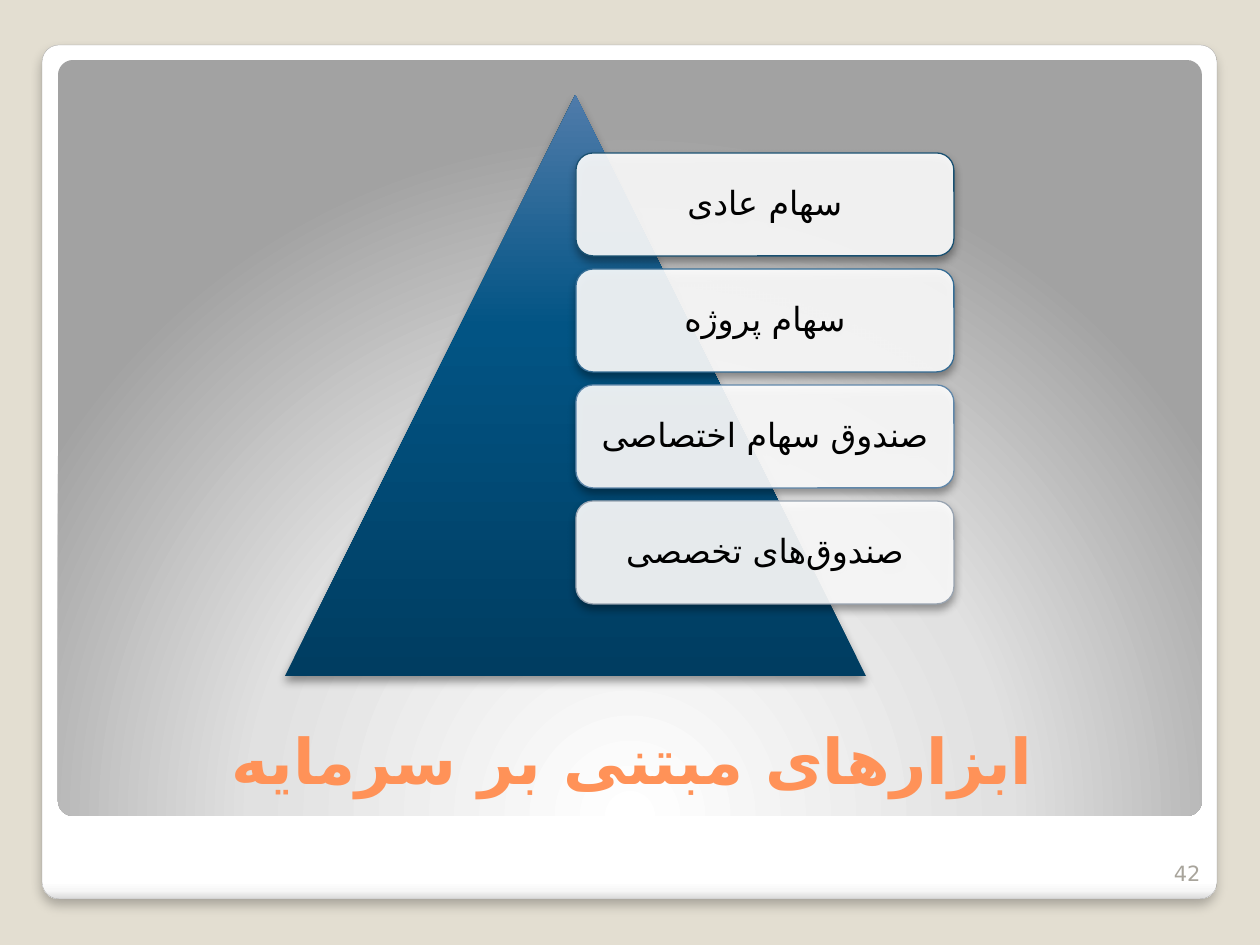
from lxml import etree
from pptx import Presentation
from pptx.dml.color import RGBColor
from pptx.enum.shapes import MSO_SHAPE as SHAPE
from pptx.enum.text import MSO_ANCHOR as ANCHOR, PP_ALIGN as ALIGN
from pptx.oxml.ns import qn
from pptx.util import Emu, Pt

PX_PER_INCH = 126
FONT = "DejaVu Sans"
COLORS = {
    "background": "E3DED1",
    "white": "FFFFFF",
    "black": "000000",
    "frame_line": "A4A4A4",
    "title": "FF9258",
    "number": "A8A49B",
}
FRAME_STOPS = [(0, "FFFFFF"), (98, "FFFFFF"), (99, "F7F7F7"), (100, "DADADA")]
PANEL_STOPS = [(0, "FFFFFF"), (55, "E1E1E1"), (100, "A2A2A2")]
PYRAMID_STOPS = [(0, "003D61"), (60, "025484"), (100, "4F7BAA")]
NON_JOINER = chr(0x200C)
CARDS = [
    ("سهام عادی", "195071"),
    ("سهام پروژه", "356C94"),
    ("صندوق سهام اختصاصی", "6087AA"),
    (NON_JOINER.join(["صندوق", "های تخصصی"]), "99A4B1"),
]
CARD_TOP, CARD_PITCH = 153, 116


def px(n):
    return Emu(round(n * 914400 / PX_PER_INCH))


def rgb(value):
    return RGBColor.from_string(value)


def sub(parent, tag, **attrs):
    return etree.SubElement(parent, qn(tag), {k: str(v) for k, v in attrs.items()})


def add_color(parent, value, alpha=None):
    color = sub(parent, "a:srgbClr", val=value)
    if alpha is not None:
        sub(color, "a:alpha", val=alpha * 1000)


def add_shape(slide, kind, box, radius=None):
    """Add a preset shape without line or shadow."""
    s = slide.shapes.add_shape(kind, *map(px, box))
    s.shadow.inherit = False
    s.line.fill.background()
    if radius is not None:
        s.adjustments[0] = radius
    return s


def set_line(s, color, width):
    s.line.color.rgb = rgb(color)
    s.line.width = Pt(width)


def set_gradient(s, stops, angle=None, center=None):
    """Fill along an angle, or in circles around a rectangle (l, t, r, b in %)."""
    s.fill.background()
    spPr = s._element.spPr
    grad = etree.Element(qn("a:gradFill"), rotWithShape="1")
    stop_list = sub(grad, "a:gsLst")
    for position, color in stops:
        add_color(sub(stop_list, "a:gs", pos=position * 1000), color)
    if center:
        circle = sub(grad, "a:path", path="circle")
        sub(circle, "a:fillToRect", **{k: v * 1000 for k, v in zip("ltrb", center)})
    else:
        sub(grad, "a:lin", ang=angle * 60000, scaled=0)
    spPr.replace(spPr.find(qn("a:noFill")), grad)


def set_shadow(s, alpha, blur, distance):
    effects = s._element.spPr.find(qn("a:effectLst"))
    shadow = sub(effects, "a:outerShdw", blurRad=Pt(blur), dist=Pt(distance),
                 dir=90 * 60000, algn="ctr", rotWithShape=0)
    add_color(shadow, COLORS["black"], alpha)


def write(s, text, size, color, anchor=ANCHOR.MIDDLE, align=ALIGN.CENTER, bold=False):
    """Write one right-to-left paragraph and return it."""
    tf = s.text_frame
    tf.word_wrap = True
    tf.vertical_anchor = anchor
    p = tf.paragraphs[0]
    p.alignment = align
    p._p.get_or_add_pPr().set("rtl", "1")
    r = p.add_run()
    r.text = text
    r.font.size = Pt(size)
    r.font.bold = bold
    r.font.name = FONT
    r.font.color.rgb = rgb(color)
    sub(r._r.get_or_add_rPr(), "a:cs", typeface=FONT)
    return p


def add_text(slide, box, *args, **kwargs):
    write(slide.shapes.add_textbox(*map(px, box)), *args, **kwargs)


def add_frame(slide):
    frame = add_shape(slide, SHAPE.ROUNDED_RECTANGLE, (42, 45, 1175, 854), 0.02)
    set_gradient(frame, FRAME_STOPS, angle=90)
    set_line(frame, COLORS["frame_line"], 0.16)
    set_shadow(frame, 25, 6, 4)
    panel = add_shape(slide, SHAPE.ROUNDED_RECTANGLE, (58, 60, 1144, 756), 0.02)
    set_gradient(panel, PANEL_STOPS, center=(50, 175, 50, -75))


def add_pyramid(slide):
    pyramid = add_shape(slide, SHAPE.ISOSCELES_TRIANGLE, (285, 95, 581, 581))
    set_gradient(pyramid, PYRAMID_STOPS, angle=270)
    set_shadow(pyramid, 40, 5.2, 3)


def add_card(slide, top, text, line):
    card = add_shape(slide, SHAPE.ROUNDED_RECTANGLE, (576, top, 378, 103))
    card.fill.solid()
    card.fill.fore_color.rgb = rgb(COLORS["white"])
    color = card._element.spPr.find(qn("a:solidFill"))[0]
    sub(color, "a:alpha", val=90000)
    set_line(card, line, 0.75)
    set_shadow(card, 40, 5.2, 3)
    tf = card.text_frame
    tf.margin_left = tf.margin_right = tf.margin_top = tf.margin_bottom = px(10)
    write(card, text, 19, COLORS["black"]).line_spacing = 0.9


def main():
    prs = Presentation()
    prs.slide_width, prs.slide_height = px(1260), px(945)
    slide = prs.slides.add_slide(prs.slide_layouts[6])
    slide.background.fill.solid()
    slide.background.fill.fore_color.rgb = rgb(COLORS["background"])
    add_frame(slide)
    add_text(slide, (69, 687, 1126, 145), "ابزارهای مبتنی بر سرمایه",
             36, COLORS["title"], bold=True)
    add_pyramid(slide)
    for i, (text, line) in enumerate(CARDS):
        add_card(slide, CARD_TOP + i * CARD_PITCH, text, line)
    add_text(slide, (1150, 842, 63, 50), "42", 12, COLORS["number"],
             anchor=ANCHOR.BOTTOM, align=ALIGN.RIGHT)
    prs.save("out.pptx")


if __name__ == "__main__":
    main()
